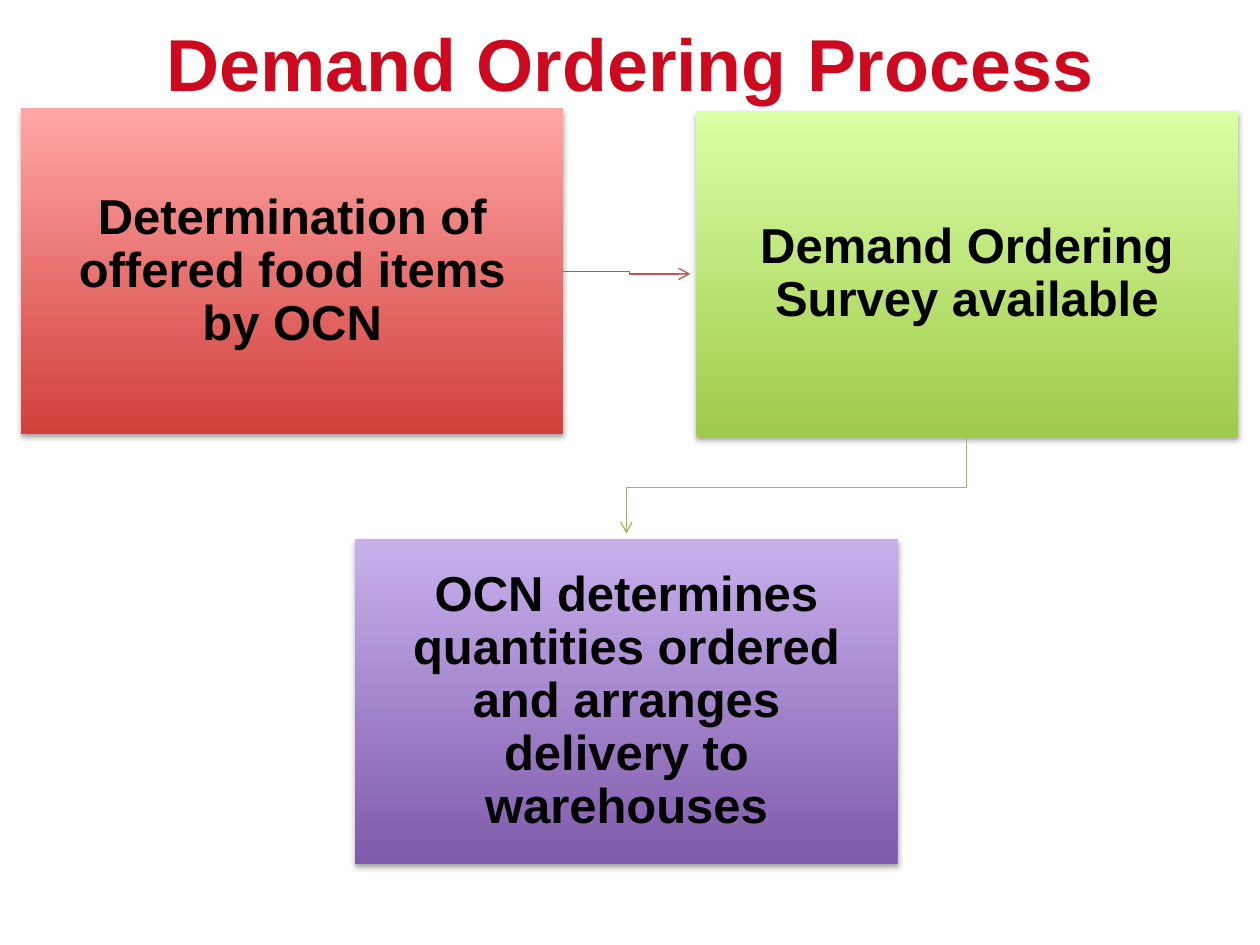
import pptx
import pptx.dml.color
import pptx.enum.shapes
import pptx.enum.text
import pptx.oxml
import pptx.oxml.ns
import pptx.util

Pt = pptx.util.Pt
BOX_W, BOX_H = 310, 186
ARROW_GAP = 3


def rgb(value):
    """Return the colour for a hex string."""
    return pptx.dml.color.RGBColor.from_string(value)


def add_xml(parent, xml):
    """Append a DrawingML fragment to a parent element."""
    ns = pptx.oxml.ns.nsdecls("a")
    parent.append(pptx.oxml.parse_xml(f'<a:wrap {ns}>{xml}</a:wrap>')[0])


def write(sp, text, size, color, margins, anchor):
    """Write one bold centred paragraph into a shape and return it."""
    tf = sp.text_frame
    tf.word_wrap = True
    tf.vertical_anchor = anchor
    tf.margin_left, tf.margin_top, tf.margin_right, tf.margin_bottom = map(Pt, margins)
    p = tf.paragraphs[0]
    p.text = text
    p.alignment = pptx.enum.text.PP_ALIGN.CENTER
    p.font.name = "Arial"
    p.font.size = Pt(size)
    p.font.bold = True
    p.font.color.rgb = rgb(color)
    return p


def add_title(s, text):
    """Add the slide title."""
    sp = s.shapes.add_textbox(Pt(36), Pt(5.75), Pt(648), Pt(51))
    write(sp, text, 42, "CD0920", (0, 4.25, 0, 0), pptx.enum.text.MSO_ANCHOR.TOP)


def add_step(s, left, top, text, dark, light):
    """Add a process step with an upward gradient and a soft shadow."""
    sp = s.shapes.add_shape(pptx.enum.shapes.MSO_SHAPE.RECTANGLE,
                            Pt(left), Pt(top), Pt(BOX_W), Pt(BOX_H))
    sp.fill.gradient()
    sp.fill.gradient_angle = 90
    for stop, color in zip(sp.fill.gradient_stops, (dark, light)):
        stop.color.rgb = rgb(color)
    sp.line.fill.background()
    sp.shadow.inherit = False
    effects = sp._element.spPr.find(pptx.oxml.ns.qn("a:effectLst"))
    add_xml(effects, f'<a:outerShdw blurRad="{Pt(3.1)}" dist="{Pt(1.8)}" dir="5400000" '
                     'rotWithShape="0"><a:srgbClr val="000000">'
                     '<a:alpha val="35000"/></a:srgbClr></a:outerShdw>')
    p = write(sp, text, 28, "000000", (16, 16, 16, 16), pptx.enum.text.MSO_ANCHOR.MIDDLE)
    p.line_spacing = 0.9


def add_elbow(s, points, color):
    """Add a bent line with an open arrowhead at its end."""
    start, *rest = [(Pt(x), Pt(y)) for x, y in points]
    builder = s.shapes.build_freeform(*start)
    builder.add_line_segments(rest, close=False)
    sp = builder.convert_to_shape()
    sp.fill.background()
    sp.line.color.rgb = rgb(color)
    sp.line.width = Pt(0.75)
    add_xml(sp.line._get_or_add_ln(), '<a:tailEnd type="arrow"/>')
    sp.shadow.inherit = False


def main():
    """Build the slide and save it."""
    prs = pptx.Presentation()
    prs.slide_width, prs.slide_height = Pt(720), Pt(540)
    s = prs.slides.add_slide(prs.slide_layouts[6])
    add_title(s, "Demand Ordering Process")

    offer, survey, delivery = (12, 62), (397.5, 63.5), (203, 308)
    add_step(s, *offer, "Determination of offered food items by OCN", "D1403C", "FFA6A5")
    add_step(s, *survey, "Demand Ordering Survey available", "A0CA4A", "DAFFA5")
    add_step(s, *delivery, "OCN determines quantities ordered and arranges delivery to warehouses",
             "7F5BAB", "C8B0ED")

    x1, y1 = offer[0] + BOX_W, offer[1] + BOX_H / 2
    x2, y2 = survey[0] - ARROW_GAP, survey[1] + BOX_H / 2
    mid = (x1 + survey[0]) / 2
    add_elbow(s, [(x1, y1), (mid, y1), (mid, y2), (x2, y2)], "C0504D")

    x1, y1 = survey[0] + BOX_W / 2, survey[1] + BOX_H
    x2, y2 = delivery[0] + BOX_W / 2, delivery[1] - ARROW_GAP
    mid = (y1 + delivery[1]) / 2
    add_elbow(s, [(x1, y1), (x1, mid), (x2, mid), (x2, y2)], "9BBB59")

    prs.save("out.pptx")


if __name__ == "__main__":
    main()
